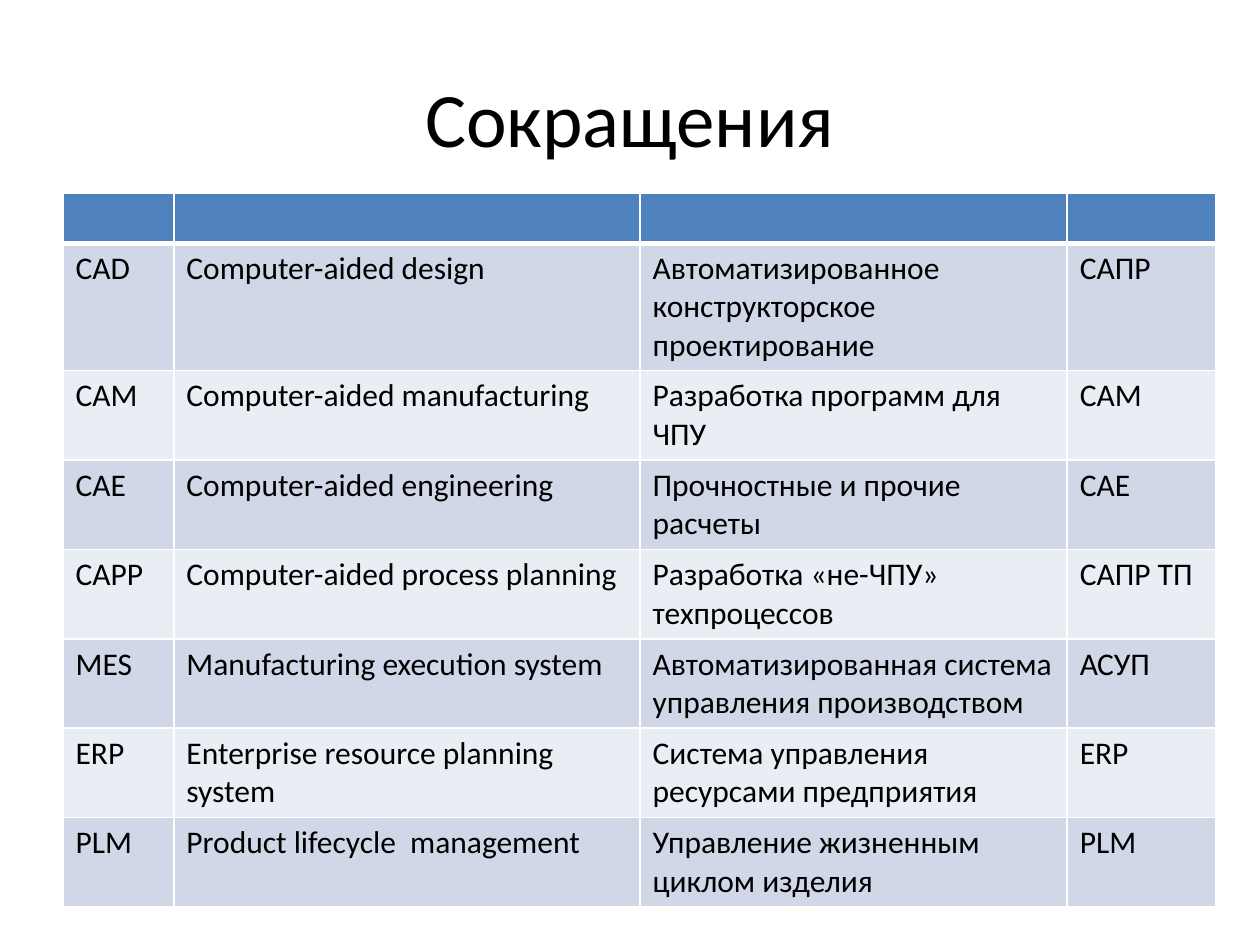
from typing import NamedTuple

import pptx
import pptx.dml.color
import pptx.enum.text
import pptx.oxml.ns
import pptx.table
import pptx.util
from lxml import etree
from pptx.util import Inches

FONT = "Calibri"
COLORS = {
    "text": "000000",
    "header": "4F81BD",
    "odd_row": "D0D8E8",
    "even_row": "E9EDF4",
    "border": "FFFFFF",
}
COLUMN_WIDTHS = (0.88, 3.7, 3.39, 1.18)
HEADER_HEIGHT, TWO_LINE_HEIGHT, THREE_LINE_HEIGHT = 0.4, 0.71, 1.01


class Abbreviation(NamedTuple):
    short: str
    english: str
    russian: str
    russian_short: str
    height: float = TWO_LINE_HEIGHT


ABBREVIATIONS = (
    Abbreviation("CAD", "Computer-aided design",
                 "Автоматизированное конструкторское проектирование", "САПР",
                 THREE_LINE_HEIGHT),
    Abbreviation("CAM", "Computer-aided manufacturing",
                 "Разработка программ для ЧПУ", "САМ"),
    Abbreviation("CAE", "Computer-aided engineering",
                 "Прочностные и прочие расчеты", "САЕ"),
    Abbreviation("CAPP", "Computer-aided process planning",
                 "Разработка «не-ЧПУ» техпроцессов", "САПР ТП"),
    Abbreviation("MES", "Manufacturing execution system",
                 "Автоматизированная система управления производством", "АСУП"),
    Abbreviation("ERP", "Enterprise resource planning system",
                 "Система управления ресурсами предприятия", "ERP"),
    Abbreviation("PLM", "Product lifecycle  management",
                 "Управление жизненным циклом изделия", "PLM"),
)


def rgb(name: str) -> pptx.dml.color.RGBColor:
    return pptx.dml.color.RGBColor.from_string(COLORS[name])


def format_font(paragraph, size: float) -> None:
    for run in paragraph.runs:
        run.font.name = FONT
        run.font.size = pptx.util.Pt(size)
        run.font.color.rgb = rgb("text")


def set_borders(cell: pptx.table._Cell, top: float, bottom: float) -> None:
    """Draw the four edges; widths are in points, the sides are 1 pt."""
    properties = cell._tc.get_or_add_tcPr()
    qn = pptx.oxml.ns.qn
    for side, width in (("L", 1), ("R", 1), ("T", top), ("B", bottom)):
        edge = etree.SubElement(properties, qn(f"a:ln{side}"), w=str(pptx.util.Pt(width)))
        fill = etree.SubElement(edge, qn("a:solidFill"))
        etree.SubElement(fill, qn("a:srgbClr"), val=COLORS["border"])


def style_cell(cell: pptx.table._Cell, row_index: int) -> None:
    set_borders(cell, top=3 if row_index == 1 else 1, bottom=3 if row_index == 0 else 1)
    if row_index == 0:
        fill_name = "header"
    else:
        fill_name = "odd_row" if row_index % 2 else "even_row"
    cell.fill.solid()
    cell.fill.fore_color.rgb = rgb(fill_name)


def add_title(slide, text: str) -> None:
    title = slide.shapes.add_textbox(Inches(0.5), Inches(0.3), Inches(9), Inches(1.25))
    frame = title.text_frame
    frame.word_wrap = True
    frame.vertical_anchor = pptx.enum.text.MSO_ANCHOR.MIDDLE
    frame.text = text
    frame.paragraphs[0].alignment = pptx.enum.text.PP_ALIGN.CENTER
    format_font(frame.paragraphs[0], 44)


def add_abbreviation_table(slide, abbreviations: tuple[Abbreviation, ...]) -> None:
    heights = [HEADER_HEIGHT] + [entry.height for entry in abbreviations]
    table = slide.shapes.add_table(
        len(heights), len(COLUMN_WIDTHS), Inches(0.5), Inches(1.53),
        Inches(sum(COLUMN_WIDTHS)), Inches(sum(heights))).table
    for column, width in zip(table.columns, COLUMN_WIDTHS):
        column.width = Inches(width)
    for row_index, (row, height) in enumerate(zip(table.rows, heights)):
        row.height = Inches(height)
        for cell in row.cells:
            style_cell(cell, row_index)
    for row_index, entry in enumerate(abbreviations, start=1):
        for column_index, text in enumerate(entry[:len(COLUMN_WIDTHS)]):
            frame = table.cell(row_index, column_index).text_frame
            frame.text = text
            format_font(frame.paragraphs[0], 18)


def main() -> None:
    presentation = pptx.Presentation()
    presentation.slide_width = Inches(10)
    presentation.slide_height = Inches(7.5)
    slide = presentation.slides.add_slide(presentation.slide_layouts[6])
    add_title(slide, "Сокращения")
    add_abbreviation_table(slide, ABBREVIATIONS)
    presentation.save("out.pptx")


if __name__ == "__main__":
    main()
